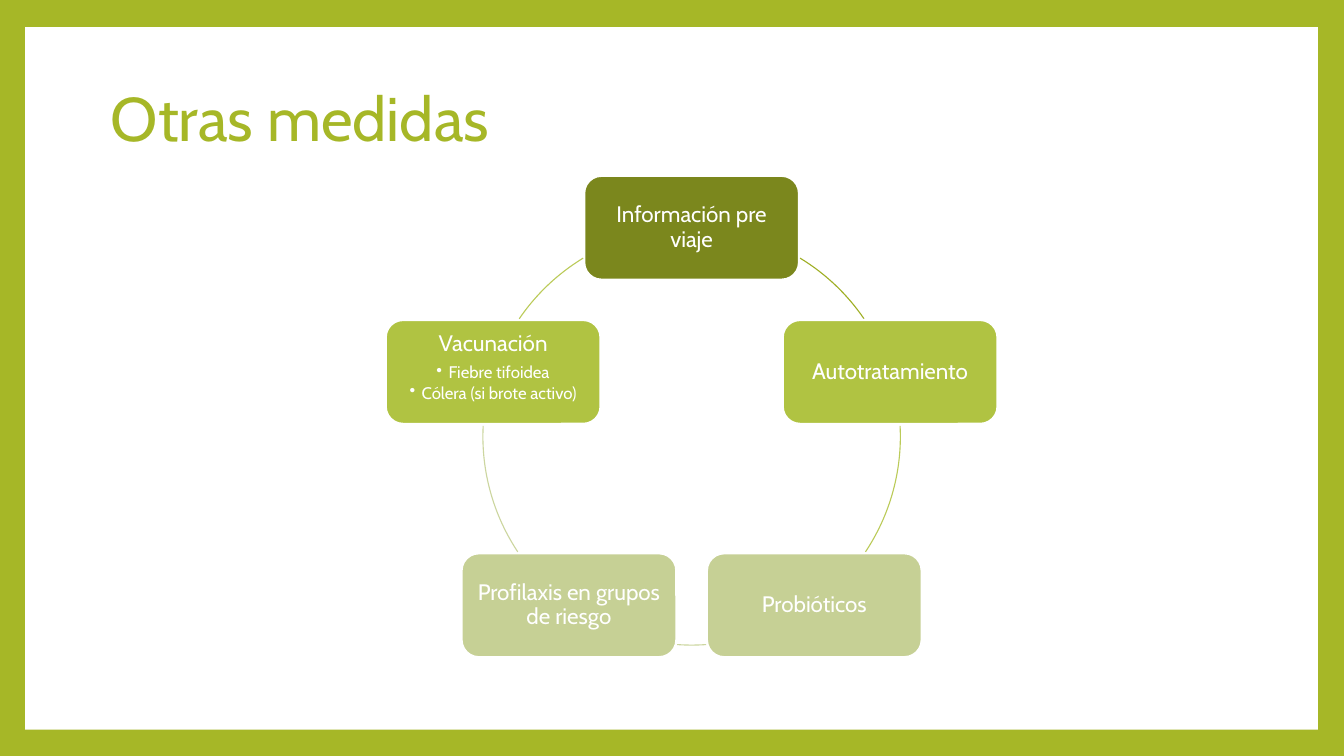
import math

import lxml.etree
import pptx
import pptx.dml.color
import pptx.enum.shapes
import pptx.enum.text
import pptx.oxml.ns
import pptx.util

Inches = pptx.util.Inches
Pt = pptx.util.Pt
Shape = pptx.enum.shapes.MSO_SHAPE
Anchor = pptx.enum.text.MSO_ANCHOR
Align = pptx.enum.text.PP_ALIGN
rgb = pptx.dml.color.RGBColor.from_string


class Theme:
    font = "Cabin"
    frame = rgb("A6B727")
    white = rgb("FFFFFF")
    dark = rgb("7B871D")
    medium = rgb("B0C342")
    light = rgb("C6D095")
    arc_dark = rgb("9FAF25")
    arc_medium = rgb("BBCB59")
    arc_light = rgb("CCD69F")
    title_size = 44
    step_size = 16
    detail_size = 12


def write(shape, text, size, color, align=Align.LEFT, anchor=Anchor.MIDDLE,
          inset=0.1, details=()):
    """Fill a shape with a heading line and optional bulleted details."""
    frame = shape.text_frame
    frame.word_wrap = True
    frame.vertical_anchor = anchor
    frame.margin_left = frame.margin_right = Inches(inset)
    frame.margin_top = frame.margin_bottom = Inches(inset)
    lines = [text, *details]
    for index, line in enumerate(lines):
        paragraph = frame.add_paragraph() if index else frame.paragraphs[0]
        paragraph.alignment = align
        paragraph.line_spacing = 0.9
        run = paragraph.add_run()
        run.text = line
        run.font.name = Theme.font
        run.font.size = Pt(Theme.detail_size if index else size)
        run.font.color.rgb = color
        if index < len(lines) - 1:
            paragraph.space_after = Pt(1.8 if index else 5.6)
        if index:
            paragraph.level = 1
            properties = paragraph._p.get_or_add_pPr()
            properties.set("marL", str(Inches(0.12)))
            properties.set("indent", str(Inches(-0.12)))
            bullet = lxml.etree.SubElement(properties, pptx.oxml.ns.qn("a:buChar"))
            bullet.set("char", "•")


deck = pptx.Presentation()
deck.slide_width = Inches(13.33)
deck.slide_height = Inches(7.5)
slide = deck.slides.add_slide(deck.slide_layouts[6])
slide.background.fill.solid()
slide.background.fill.fore_color.rgb = Theme.frame

page = slide.shapes.add_shape(
    Shape.RECTANGLE, Inches(0.25), Inches(0.27), Inches(12.82), Inches(6.97))
page.shadow.inherit = False
page.fill.solid()
page.fill.fore_color.rgb = Theme.white
page.line.fill.background()

title = slide.shapes.add_textbox(Inches(1), Inches(0.47), Inches(10.8), Inches(1.48))
write(title, "Otras medidas", Theme.title_size, Theme.frame)

# Cycle of measures: clockwise from the top, each followed by its arc in degrees
center_x, center_y, radius = 6.86, 4.33, 2.07
step_width, step_height = 2.13, 1.03
measures = [
    ("Información pre viaje", (), Theme.dark, Theme.arc_dark, 301.3, 325.7),
    ("Autotratamiento", (), Theme.medium, Theme.arc_medium, 357.1, 33.6),
    ("Probióticos", (), Theme.light, Theme.arc_light, 86, 94),
    ("Profilaxis en grupos de riesgo", (), Theme.light, Theme.arc_light, 146.4, 182.9),
    ("Vacunación", ("Fiebre tifoidea", "Cólera (si brote activo)"),
     Theme.medium, Theme.arc_medium, 214.3, 238.7),
]
for index, (name, details, fill, arc_color, start, end) in enumerate(measures):
    angle = math.radians(360 / len(measures) * index - 90)
    step = slide.shapes.add_shape(
        Shape.ROUNDED_RECTANGLE,
        Inches(center_x + radius * math.cos(angle) - step_width / 2),
        Inches(center_y + radius * math.sin(angle) - step_height / 2),
        Inches(step_width), Inches(step_height))
    step.shadow.inherit = False
    step.fill.solid()
    step.fill.fore_color.rgb = fill
    step.line.color.rgb = Theme.white
    step.line.width = Pt(1.5)
    write(step, name, Theme.step_size, Theme.white, align=Align.CENTER,
          anchor=Anchor.TOP if details else Anchor.MIDDLE, inset=0.07, details=details)

    arc = slide.shapes.add_shape(
        Shape.ARC, Inches(center_x - radius), Inches(center_y - radius),
        Inches(2 * radius), Inches(2 * radius))
    arc.shadow.inherit = False
    # Arc adjustments count 0.6 per degree
    arc.adjustments[0] = start * 0.6
    arc.adjustments[1] = end * 0.6
    arc.fill.background()
    arc.line.color.rgb = arc_color
    arc.line.width = Pt(0.79)

deck.save("out.pptx")
